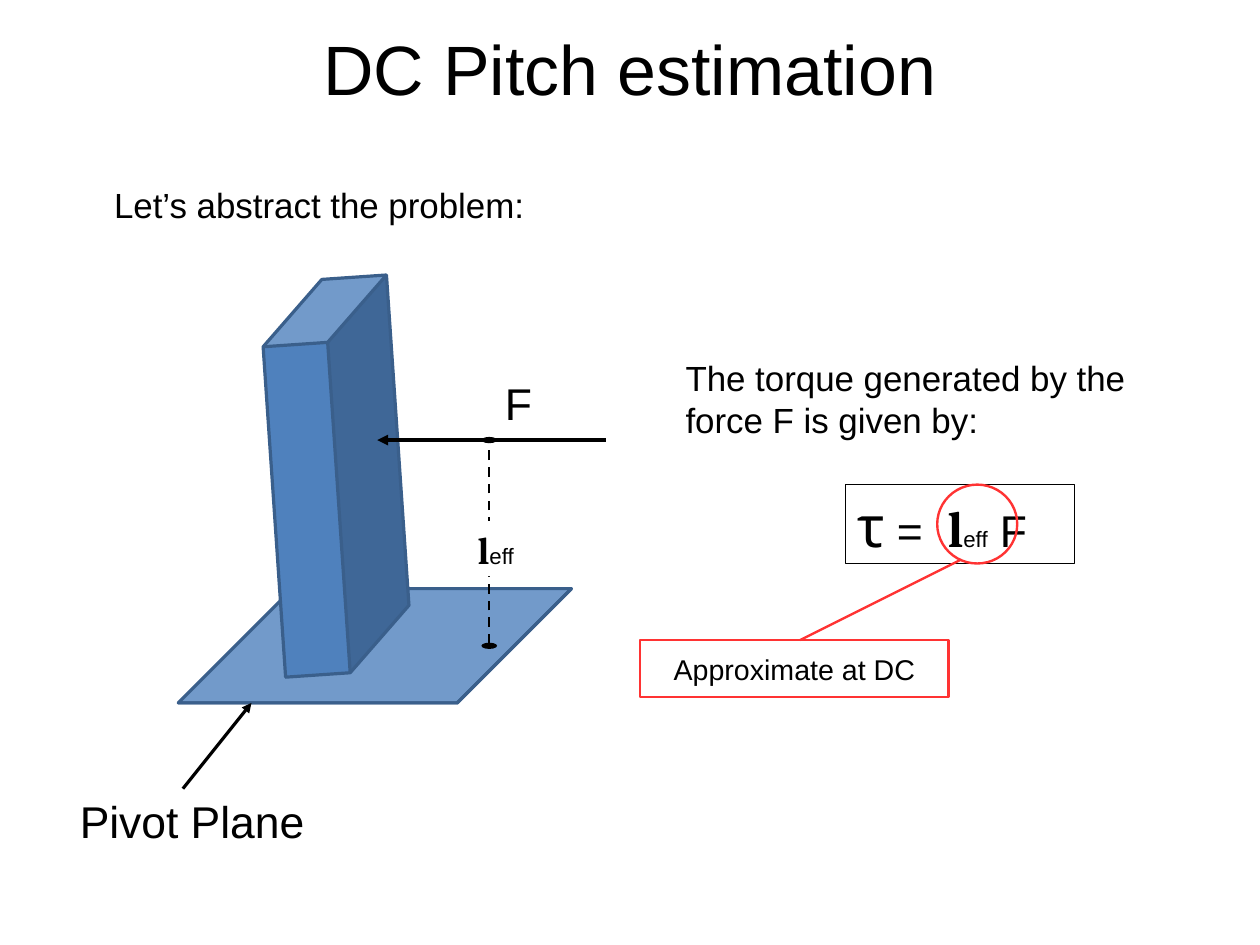
from pptx import Presentation
from pptx.dml.color import RGBColor
from pptx.enum.dml import MSO_LINE
from pptx.enum.shapes import MSO_CONNECTOR, MSO_SHAPE
from pptx.enum.text import MSO_ANCHOR, PP_ALIGN
from pptx.oxml.ns import qn
from pptx.util import Pt
from lxml import etree

CUBE, RECT, OVAL = MSO_SHAPE.CUBE, MSO_SHAPE.RECTANGLE, MSO_SHAPE.OVAL
STRAIGHT = MSO_CONNECTOR.STRAIGHT
TOP, MIDDLE = MSO_ANCHOR.TOP, MSO_ANCHOR.MIDDLE
CENTER, LEFT = PP_ALIGN.CENTER, PP_ALIGN.LEFT
DASH = MSO_LINE.DASH
COLORS = {"black": "000000", "white": "FFFFFF", "blue": "4F81BD",
          "edge": "3A5F8B", "red": "FF3333"}
TRIANGLE = {"type": "triangle"}
FLAT_DOT = {"type": "oval", "w": "lg", "len": "sm"}


def add_figure(kind, box, fill, line, width=None):
    figure = slide.shapes.add_shape(kind, *[Pt(v) for v in box])
    figure.shadow.inherit = False
    if fill:
        figure.fill.solid()
        figure.fill.fore_color.rgb = RGBColor.from_string(COLORS[fill])
    else:
        figure.fill.background()
    if line:
        figure.line.color.rgb = RGBColor.from_string(COLORS[line])
        figure.line.width = Pt(width)
    else:
        figure.line.fill.background()
    return figure


def add_line(start, end, color, width, head=None, tail=None, dash=None):
    line = slide.shapes.add_connector(STRAIGHT, *[Pt(v) for v in start + end])
    line.line.color.rgb = RGBColor.from_string(COLORS[color])
    line.line.width = Pt(width)
    if dash:
        line.line.dash_style = dash
    properties = line.line._get_or_add_ln()
    for tag, arrow in (("a:headEnd", head), ("a:tailEnd", tail)):
        if arrow:
            etree.SubElement(properties, qn(tag), arrow)
    etree.SubElement(line._element.spPr, qn("a:effectLst"))


prs = Presentation()
prs.slide_width, prs.slide_height = Pt(793.7), Pt(595.28)
slide = prs.slides.add_slide(prs.slide_layouts[5])

# Title
title = slide.shapes.title
title.left, title.top, title.width, title.height = Pt(39.7), Pt(-7.2), Pt(714.3), Pt(99.4)
title_frame = title.text_frame
title_frame.text = "DC Pitch estimation"
title_frame.vertical_anchor = MIDDLE
title_frame.margin_left = title_frame.margin_right = Pt(0)
title_frame.margin_top = title_frame.margin_bottom = Pt(0)
heading = title_frame.paragraphs[0]
heading.alignment = CENTER
heading.font.name, heading.font.size = "Arial", Pt(44)
heading.font.color.rgb = RGBColor.from_string(COLORS["black"])

# Pivot plane and the block standing on it
pivot_plane = add_figure(CUBE, (112.3, 370.8, 247.7, 72), "blue", "edge", 2)
pivot_plane.adjustments[0] = 1
block = add_figure(CUBE, (171.4, 175.7, 80.6, 248.4), "blue", "edge", 2)
block.adjustments[0] = 0.494
block.rotation = 356.1

# Force and its lever arm
add_line((381.6, 277.2), (237.6, 277.2), "black", 2.3, tail=TRIANGLE)
add_line((308.2, 406.8), (308.2, 277.2), "black", 1.5, FLAT_DOT, FLAT_DOT, DASH)

# Lever arm label and torque formula: runs of text, font, size, bold
lever_label = add_figure(RECT, (293.8, 328.3, 108, 34.6), "white", None)
formula = add_figure(RECT, (532.8, 305.3, 144, 49.7), None, "black", 0)
symbols = [
    (lever_label, [], [("l", "Cambria", 24, True), ("eff", "Arial", 14, False)]),
    (formula, [57, 90], [
        ("τ", "Karla", 36, False), (" =\t", "Arial", 28, False),
        ("l", "Cambria", 32, True), ("eff\t", "Arial", 14, False),
        ("F", "Arial", 28, False)]),
]
for holder, tab_stops, pieces in symbols:
    holder.text_frame.vertical_anchor = TOP
    paragraph = holder.text_frame.paragraphs[0]
    paragraph.alignment = LEFT
    if tab_stops:
        tabs = etree.SubElement(paragraph._p.get_or_add_pPr(), qn("a:tabLst"))
        for stop in tab_stops:
            etree.SubElement(tabs, qn("a:tab"), pos=str(Pt(stop)), algn="l")
    for text, font, size, bold in pieces:
        run = paragraph.add_run()
        run.text = text
        run.font.name, run.font.size, run.font.bold = font, Pt(size), bold
        run.font.color.rgb = RGBColor.from_string(COLORS["black"])

# Plain texts
texts = [
    ("F", (311, 233.3, 28.8, 38.2), 28),
    ("The torque generated by the force F is given by:", (424.8, 221, 331.2, 56.2), 22),
    ("Pivot Plane", (43.2, 496.8, 172.8, 38.2), 28),
    ("Let’s abstract the problem:", (64.8, 112.3, 331.2, 31.7), 22),
]
for text, box, size in texts:
    frame = slide.shapes.add_textbox(*[Pt(v) for v in box]).text_frame
    frame.word_wrap = True
    frame.text = text
    font = frame.paragraphs[0].font
    font.name, font.size = "Arial", Pt(size)
    font.color.rgb = RGBColor.from_string(COLORS["black"])

# Pointer to the pivot plane
add_line((115.2, 496.8), (158.4, 442.8), "black", 0, tail=TRIANGLE)

# Red remark on the effective length
add_figure(OVAL, (590.4, 305.3, 50.4, 49.7), None, "red", 1.5)
remark = add_figure(RECT, (403.2, 403.2, 194.4, 36), "white", "red", 1.5)
remark_frame = remark.text_frame
remark_frame.text = "Approximate at DC"
remark_frame.word_wrap = False
remark_frame.vertical_anchor = MIDDLE
remark_text = remark_frame.paragraphs[0]
remark_text.alignment = CENTER
remark_text.font.name, remark_text.font.size = "Arial", Pt(18)
remark_text.font.color.rgb = RGBColor.from_string(COLORS["black"])
add_line((604.8, 352.8), (504, 403.2), "red", 1.5)

prs.save("out.pptx")
